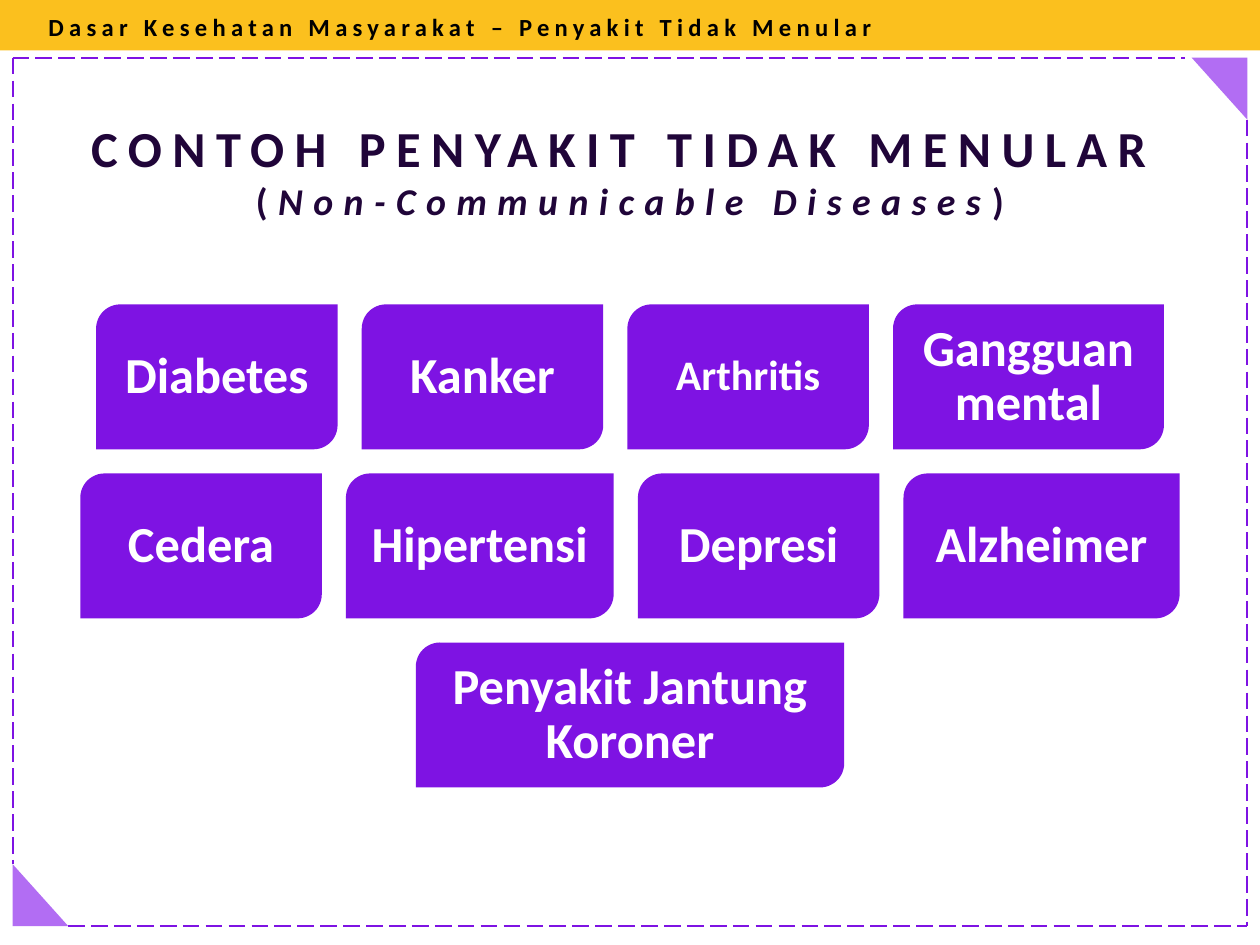
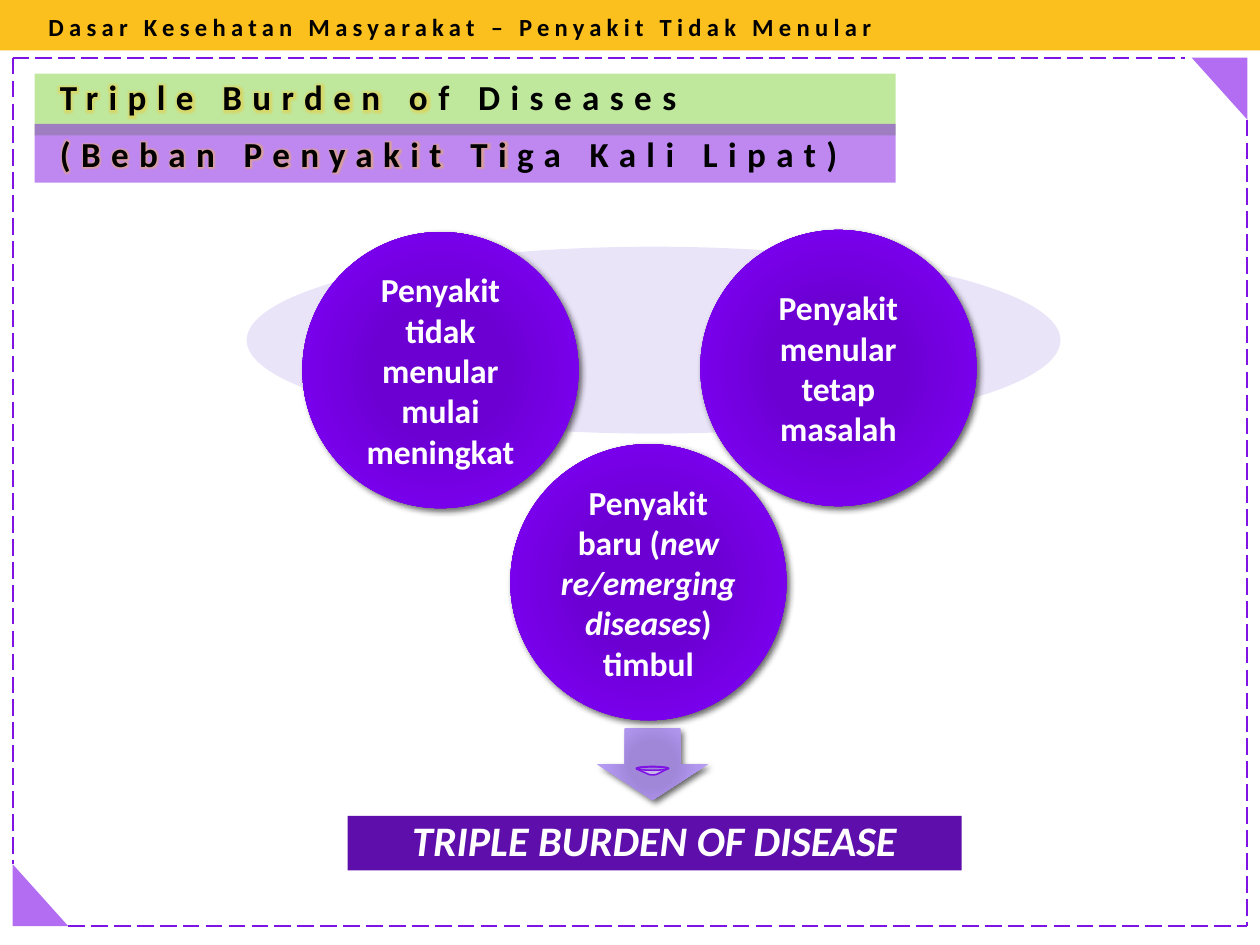
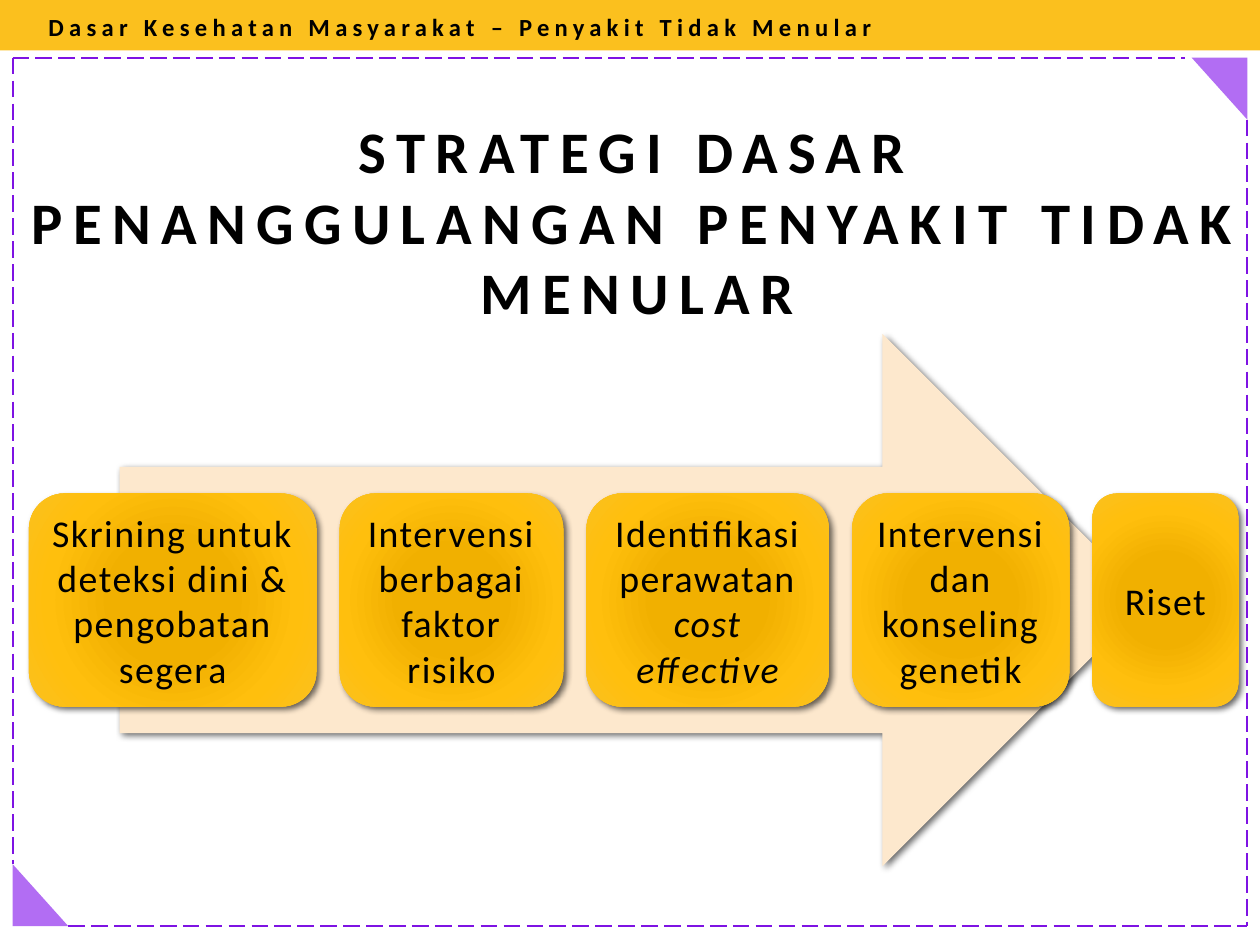
import pptx
import pptx.util
import pptx.dml.color
import pptx.enum.dml
import pptx.enum.shapes
import pptx.enum.text
import pptx.oxml
import pptx.oxml.ns
from lxml import etree

Pt = pptx.util.Pt
rgb = pptx.dml.color.RGBColor.from_string
qn = pptx.oxml.ns.qn
SHAPE = pptx.enum.shapes.MSO_SHAPE
ALIGN = pptx.enum.text.PP_ALIGN
ANCHOR = pptx.enum.text.MSO_ANCHOR
NSDECL = pptx.oxml.ns.nsdecls("a")

FONT = "Calibri"
BLACK, WHITE, INK = "000000", "FFFFFF", "200539"
PURPLE, LILAC, AMBER, GREEN = "7E13E3", "B26DF3", "FBC01E", "BFE89D"
PURPLE_GLOSS = ("6C00D3", "6C00D3", "7900EB", PURPLE)
LILAC_GLOSS = ("9E84DB", "A087D8", "B297F1", "C0ABEF")
AMBER_GLOSS = ("F1B000", "F1B000", "FFBF0D", AMBER)
WIDTH, HEIGHT = 600, 450


def draw(s, kind, box, fill, alpha=100, shadow=False):
    """Add a borderless shape; a tuple of four colours makes a radial gradient."""
    sp = s.shapes.add_shape(kind, *map(Pt, box))
    sp.shadow.inherit = False
    sp.line.fill.background()
    sp_pr = sp.element.spPr
    if isinstance(fill, tuple):
        stops = "".join(f'<a:gs pos="{pos}000"><a:srgbClr val="{color}"/></a:gs>'
                        for pos, color in zip((0, 34, 70, 100), fill))
        sp_pr.find(qn("a:prstGeom")).addnext(pptx.oxml.parse_xml(
            f'<a:gradFill {NSDECL} rotWithShape="1"><a:gsLst>{stops}</a:gsLst><a:path path="circle">'
            '<a:fillToRect l="50000" t="50000" r="50000" b="50000"/></a:path></a:gradFill>'))
    else:
        sp.fill.solid()
        sp.fill.fore_color.rgb = rgb(fill)
        if alpha < 100:
            color = sp_pr.find(qn("a:solidFill"))[0]
            etree.SubElement(color, qn("a:alpha"), val=str(alpha * 1000))
    if shadow:
        sp_pr.find(qn("a:effectLst")).append(pptx.oxml.parse_xml(
            f'<a:outerShdw {NSDECL} blurRad="38100" dist="25400" dir="2700000" rotWithShape="0">'
            f'<a:srgbClr val="{BLACK}"><a:alpha val="60000"/></a:srgbClr></a:outerShdw>'))
    return sp


def write(sp, text, size, color=BLACK, bold=True, align=ALIGN.CENTER, anchor=ANCHOR.MIDDLE,
          insets=(7.2, 3.6, 7.2, 3.6), leading=1, spacing=0, glow=None):
    """Fill a shape with text: a newline starts a paragraph, asterisks enclose italics."""
    tf = sp.text_frame
    tf.auto_size = pptx.enum.text.MSO_AUTO_SIZE.NONE
    tf.word_wrap = True
    tf.vertical_anchor = anchor
    tf.margin_left, tf.margin_top, tf.margin_right, tf.margin_bottom = map(Pt, insets)
    for i, line in enumerate(text.split("\n")):
        p = tf.add_paragraph() if i else tf.paragraphs[0]
        p.alignment = align
        p.line_spacing = leading
        for j, part in enumerate(line.split("*")):
            if not part:
                continue
            r = p.add_run()
            r.text = part
            r.font.name, r.font.size = FONT, Pt(size)
            r.font.bold, r.font.italic = bold, j % 2 == 1
            r.font.color.rgb = rgb(color)
            r_pr = r.font._element
            if spacing:
                r_pr.set("spc", str(round(spacing * 100)))
            if glow:
                r_pr.find(qn("a:solidFill")).addnext(pptx.oxml.parse_xml(
                    f'<a:effectLst {NSDECL}><a:glow rad="63500"><a:srgbClr val="{glow}">'
                    '<a:alpha val="40000"/></a:srgbClr></a:glow></a:effectLst>'))


prs = pptx.Presentation()
prs.slide_width, prs.slide_height = Pt(WIDTH), Pt(HEIGHT)

# Shared band, running header, dashed frame and corners
left, top, right, bottom = 6, 27.5, 594, 441
corner_w, corner_h = 26.5, 29.5
frame_lines = [
    (left, top, right - corner_w - 3, top),
    (left, top, left, bottom - corner_h),
    (left + corner_w, bottom, right, bottom),
    (right, top + corner_h, right, bottom),
]
slides = []
for _ in range(3):
    s = prs.slides.add_slide(prs.slide_layouts[5])
    slides.append(s)
    draw(s, SHAPE.RECTANGLE, (0, 0, WIDTH, 24), AMBER)
    header = s.shapes.add_textbox(Pt(16), Pt(2), Pt(440), Pt(21.5))
    write(header, "Dasar Kesehatan Masyarakat – Penyakit Tidak Menular", 11.7,
          align=ALIGN.LEFT, anchor=ANCHOR.TOP, spacing=2.5)
    for ends in frame_lines:
        line = s.shapes.add_connector(pptx.enum.shapes.MSO_CONNECTOR.STRAIGHT, *map(Pt, ends))
        line.line.color.rgb = rgb(PURPLE)
        line.line.width = Pt(1)
        line.line.dash_style = pptx.enum.dml.MSO_LINE.LONG_DASH
        etree.SubElement(line.element.spPr, qn("a:effectLst"))
    draw(s, SHAPE.RIGHT_TRIANGLE, (left, bottom - corner_h, corner_w, corner_h), LILAC)
    draw(s, SHAPE.RIGHT_TRIANGLE, (right - corner_w, top, corner_w, corner_h), LILAC).rotation = 180

# Titles
burden_style = {"align": ALIGN.LEFT, "glow": AMBER}
titles = [
    ("CONTOH PENYAKIT TIDAK MENULAR \n(*Non-Communicable Diseases*)", (12, 52, 576, 58), 24,
     {"color": INK}),
    ("Triple Burden of Diseases", (16.5, 35, 410, 29.5), 16.7,
     {"insets": (12, 1, 7, 0), **burden_style}),
    ("STRATEGI DASAR PENANGGULANGAN PENYAKIT TIDAK MENULAR", (7, 51, 593, 109), 28, {}),
]
for s, (text, box, size, style) in zip(slides, titles):
    title = s.shapes.title
    title.left, title.top, title.width, title.height = map(Pt, box)
    write(title, text, size, anchor=ANCHOR.TOP, spacing=5, **style)

# Slide 1: examples of diseases, each row centred
s = slides[0]
for r in s.shapes.title.text_frame.paragraphs[1].runs:
    r.font.size = Pt(18)
card_h, gap = 69, 11.5
card_rows = [
    [("Diabetes", 115), ("Kanker", 115), ("Arthritis", 115), ("Gangguan mental", 129)],
    [("Cedera", 115), ("Hipertensi", 127.5), ("Depresi", 115), ("Alzheimer", 131.5)],
    [("Penyakit Jantung Koroner", 204)],
]
for i, row in enumerate(card_rows):
    x = (WIDTH - sum(w for _, w in row) - gap * (len(row) - 1)) / 2
    for text, w in row:
        card = draw(s, SHAPE.ROUND_2_DIAG_RECTANGLE, (x, 145 + i * (card_h + gap), w, card_h), PURPLE)
        write(card, text, 20 if text == "Arthritis" else 24, WHITE, insets=(7,) * 4, leading=0.9)
        x += w + gap

# Slide 2: three burdens leading to one
s = slides[1]
s.shapes.title.fill.solid()
s.shapes.title.fill.fore_color.rgb = rgb(GREEN)
subtitle = draw(s, SHAPE.RECTANGLE, (16.5, 59, 410, 28), PURPLE, alpha=50)
write(subtitle, "(Beban Penyakit Tiga Kali Lipat)", 16.7, insets=(12, 0, 0, 0), spacing=5,
      **burden_style)
draw(s, SHAPE.OVAL, (117.5, 117.5, 387.5, 89), "CCBDF2", alpha=40)
draw(s, SHAPE.DOWN_ARROW, (284.5, 347, 52.5, 34), LILAC_GLOSS, shadow=True)
result = draw(s, SHAPE.RECTANGLE, (165.5, 388.5, 292.5, 26), "5E0EAA")
write(result, "*TRIPLE BURDEN OF DISEASE*", 20, WHITE, insets=(0,) * 4, leading=0.9)
circles = [
    ("Penyakit baru (*new re/emerging diseases*) timbul", 243, 211.5),
    ("Penyakit tidak menular mulai meningkat", 144, 110.5),
    ("Penyakit menular tetap masalah", 333.5, 109.5),
]
for text, x, y in circles:
    circle = draw(s, SHAPE.OVAL, (x, y, 131.5, 131.5), PURPLE_GLOSS, shadow=True)
    write(circle, text, 16, WHITE, insets=(1.5,) * 4)
funnel = draw(s, SHAPE.FUNNEL, (303, 365, 15.5, 4), WHITE, alpha=40)
funnel.line.color.rgb = rgb(PURPLE)
funnel.line.width = Pt(0.75)

# Slide 3: strategies along an arrow
s = slides[2]
draw(s, SHAPE.RIGHT_ARROW, (57, 159, 490, 253.5), "FDE8CD", shadow=True)
strategies = [
    ("Skrining untuk deteksi dini & pengobatan segera", 137),
    ("Intervensi berbagai faktor risiko", 106.5),
    ("Identifikasi perawatan *cost effective*", 115.5),
    ("Intervensi dan konseling genetik", 103.5),
    ("Riset", 69.5),
]
x = 13.75
for text, w in strategies:
    step = draw(s, SHAPE.ROUNDED_RECTANGLE, (x, 235, w, 101.5), AMBER_GLOSS, shadow=True)
    write(step, text, 18, bold=False, insets=(5,) * 4, spacing=0.7)
    x += w + 11

prs.save("out.pptx")
